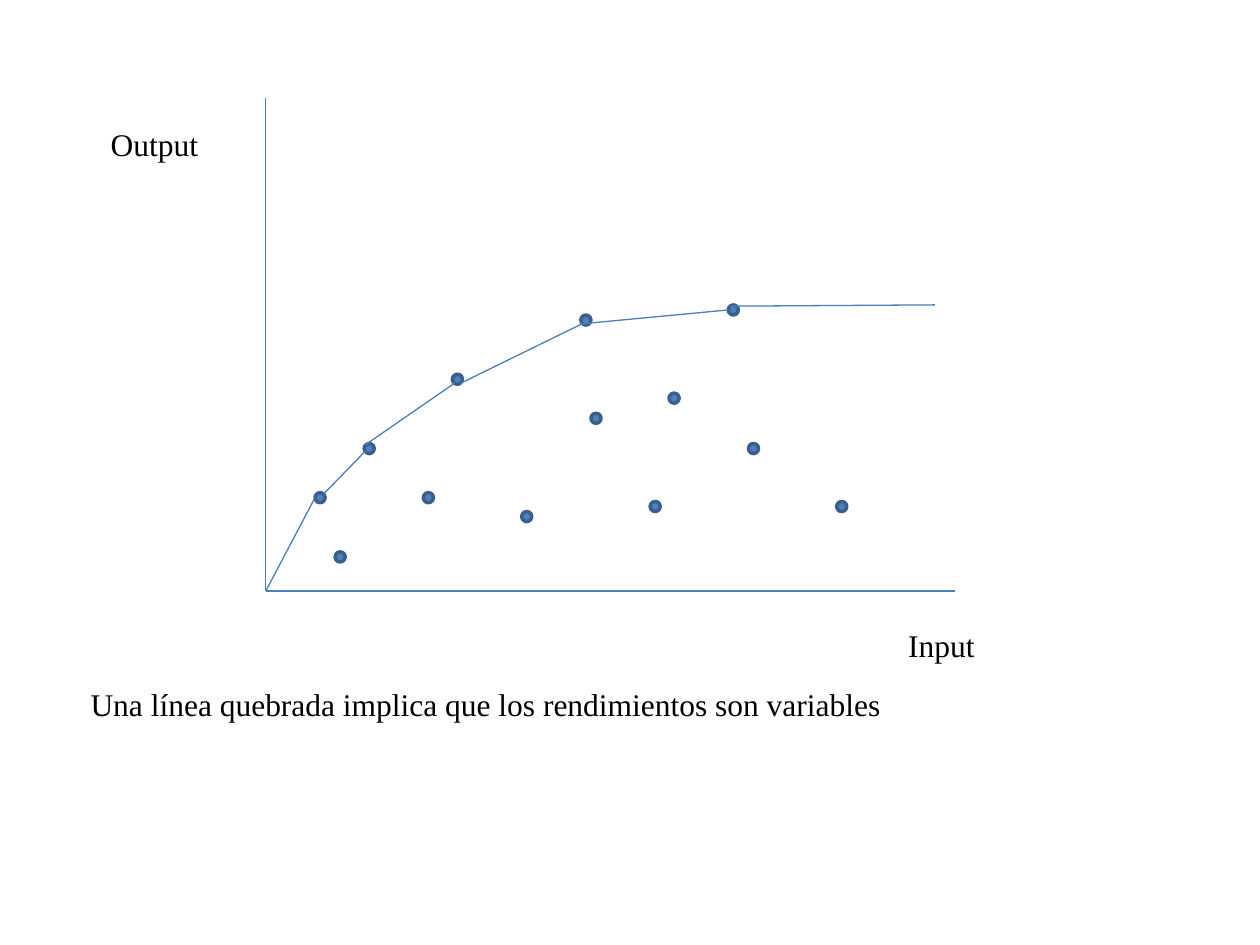
from typing import NamedTuple

from lxml import etree
from pptx import Presentation
from pptx.dml.color import RGBColor
from pptx.enum.shapes import MSO_CONNECTOR, MSO_SHAPE
from pptx.oxml.ns import qn
from pptx.slide import Slide
from pptx.util import Inches, Pt

STRAIGHT = MSO_CONNECTOR.STRAIGHT
OVAL = MSO_SHAPE.OVAL
BLANK_LAYOUT = 6


class Theme(NamedTuple):
    line: RGBColor = RGBColor(0x4B, 0x7E, 0xBC)
    dot_fill: RGBColor = RGBColor(0x4F, 0x81, 0xBD)
    dot_edge: RGBColor = RGBColor(0x3A, 0x5F, 0x8C)
    text: RGBColor = RGBColor(0, 0, 0)
    font: str = "Times New Roman"
    text_size: float = 18
    line_width: float = 0.75
    edge_width: float = 2


class Point(NamedTuple):
    x: float
    y: float


class Segment(NamedTuple):
    start: Point
    end: Point


class Label(NamedTuple):
    text: str
    left: float
    top: float
    width: float
    height: float


THEME = Theme()
DOT_SIZE = 0.08
ORIGIN = Point(2.11, 4.69)

AXES = [
    Segment(Point(ORIGIN.x, 0.78), ORIGIN),
    Segment(ORIGIN, Point(7.58, ORIGIN.y)),
]

# Top left corner of each observed unit
OBSERVATIONS = [
    Point(2.5, 3.91), Point(2.89, 3.52), Point(3.36, 3.91), Point(2.66, 4.38),
    Point(3.59, 2.97), Point(4.14, 4.06), Point(4.69, 3.28), Point(4.61, 2.5),
    Point(5.31, 3.12), Point(5.16, 3.98), Point(5.94, 3.52), Point(5.78, 2.42),
    Point(6.64, 3.98),
]

FRONTIER = [
    Segment(ORIGIN, Point(2.5, 3.95)),
    Segment(Point(2.57, 3.92), Point(2.9, 3.58)),
    Segment(Point(2.9, 3.53), Point(3.61, 3.04)),
    Segment(Point(3.66, 3.04), Point(4.62, 2.57)),
    Segment(Point(4.62, 2.57), Point(5.78, 2.46)),
    Segment(Point(5.79, 2.43), Point(7.42, 2.42)),
]

LABELS = [
    Label("Output", 0.78, 0.94, 1.33, 0.71),
    Label("Input", 7.11, 4.92, 1.48, 0.71),
    Label("Una línea quebrada implica que los rendimientos son variables",
          0.62, 5.39, 7.81, 0.4),
]


def draw_segment(slide: Slide, segment: Segment) -> None:
    start, end = segment
    connector = slide.shapes.add_connector(
        STRAIGHT, Inches(start.x), Inches(start.y), Inches(end.x), Inches(end.y))
    connector.line.color.rgb = THEME.line
    connector.line.width = Pt(THEME.line_width)
    etree.SubElement(connector._element.spPr, qn("a:effectLst"))


def draw_observation(slide: Slide, corner: Point) -> None:
    dot = slide.shapes.add_shape(
        OVAL, Inches(corner.x), Inches(corner.y), Inches(DOT_SIZE), Inches(DOT_SIZE))
    dot.shadow.inherit = False
    dot.fill.solid()
    dot.fill.fore_color.rgb = THEME.dot_fill
    dot.line.color.rgb = THEME.dot_edge
    dot.line.width = Pt(THEME.edge_width)


def draw_label(slide: Slide, label: Label) -> None:
    box = slide.shapes.add_textbox(
        Inches(label.left), Inches(label.top), Inches(label.width), Inches(label.height))
    box.text_frame.word_wrap = True
    run = box.text_frame.paragraphs[0].add_run()
    run.text = label.text
    run.font.name = THEME.font
    run.font.size = Pt(THEME.text_size)
    run.font.color.rgb = THEME.text


def main() -> None:
    presentation = Presentation()
    presentation.slide_width = Inches(10)
    presentation.slide_height = Inches(7.5)
    slide = presentation.slides.add_slide(presentation.slide_layouts[BLANK_LAYOUT])
    for axis in AXES:
        draw_segment(slide, axis)
    for observation in OBSERVATIONS:
        draw_observation(slide, observation)
    for segment in FRONTIER:
        draw_segment(slide, segment)
    for label in LABELS:
        draw_label(slide, label)
    presentation.save("out.pptx")


if __name__ == "__main__":
    main()
